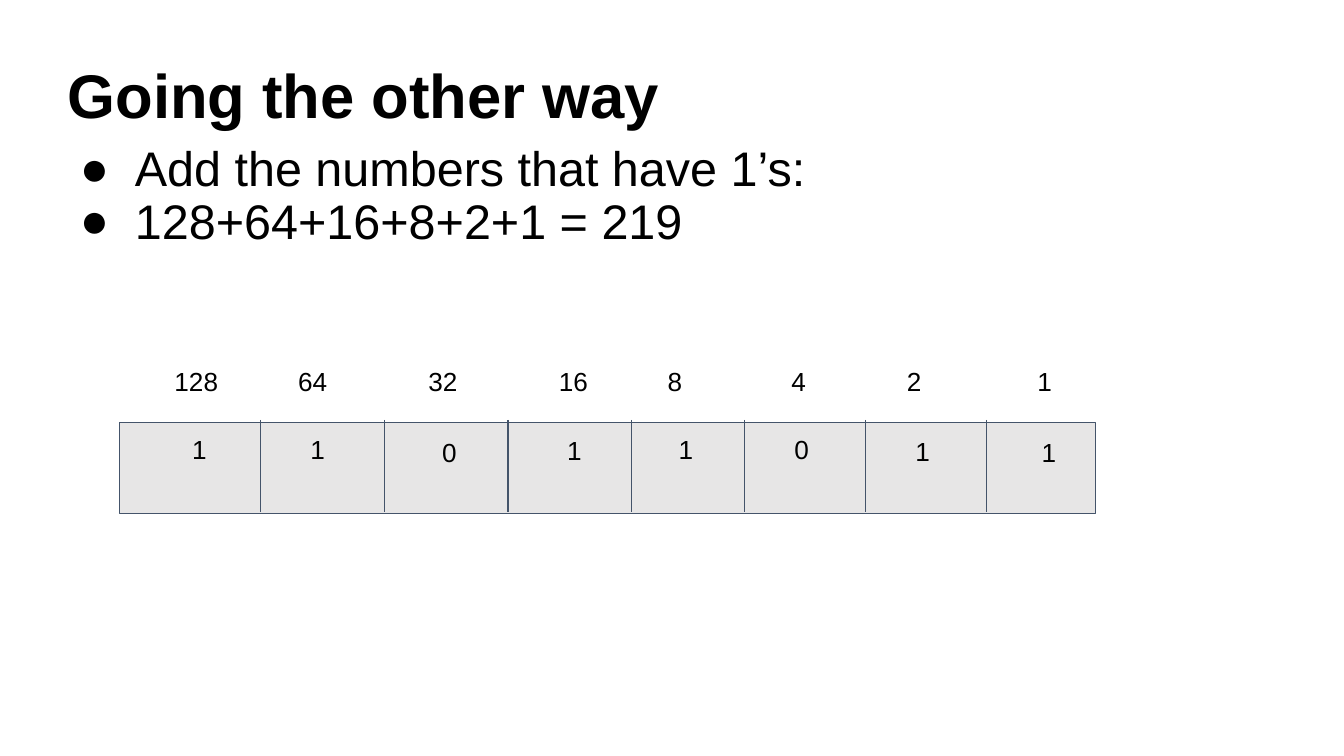
from itertools import accumulate

from lxml.etree import SubElement
from pptx import Presentation
from pptx.dml.color import RGBColor
from pptx.enum.shapes import MSO_CONNECTOR, MSO_SHAPE
from pptx.enum.text import MSO_ANCHOR
from pptx.oxml.ns import qn
from pptx.util import Inches, Pt

BLACK = RGBColor(0x00, 0x00, 0x00)
SLATE = RGBColor(0x44, 0x54, 0x6A)
PALE_GREY = RGBColor(0xE7, 0xE6, 0xE6)

CELL = Inches(0.1)
TITLE_FONT = {"name": "Arial", "size": Pt(33), "bold": True}
BODY_FONT = {"name": "Arial", "size": Pt(26), "bold": False}
DIGIT_FONT = {"name": "Arial", "size": Pt(14), "bold": False}


def grid(cells):
    return round(cells * CELL)


class ByteSlide:
    def __init__(self, slide):
        self.slide = slide

    def text(self, col, row, cols, rows, lines, font, **frame_format):
        box = self.slide.shapes.add_textbox(*map(grid, (col, row, cols, rows)))
        frame = box.text_frame
        values = {"word_wrap": True, "margin_left": grid(1), "margin_right": grid(1),
                  "margin_top": grid(0.5), "margin_bottom": grid(0.5), **frame_format}
        for name, value in values.items():
            setattr(frame, name, value)
        for index, line in enumerate(lines):
            paragraph = frame.paragraphs[0] if index == 0 else frame.add_paragraph()
            run = paragraph.add_run()
            run.text = line
            for name, value in font.items():
                setattr(run.font, name, value)
            run.font.color.rgb = BLACK
        return frame.paragraphs

    def title(self, col, row, cols, rows, wording):
        heading, = self.text(col, row, cols, rows, [wording], TITLE_FONT,
                             vertical_anchor=MSO_ANCHOR.MIDDLE)
        heading.line_spacing = 0.9

    def bullets(self, col, row, cols, rows, lines):
        for paragraph in self.text(col, row, cols, rows, lines, BODY_FONT):
            paragraph.line_spacing = 0.9
            properties = paragraph._p.get_or_add_pPr()
            properties.set("marL", str(grid(5)))
            properties.set("indent", str(-grid(4.1)))
            colour = SubElement(properties, qn("a:buClr"))
            SubElement(colour, qn("a:srgbClr"), val=str(BLACK))
            SubElement(properties, qn("a:buFont"), typeface="Arial")
            SubElement(properties, qn("a:buChar"), char="●")

    def tabbed_row(self, col, row, cols, rows, entries, stops):
        paragraph, = self.text(col, row, cols, rows, ["\t" + "\t".join(entries)],
                               DIGIT_FONT, margin_top=grid(1), margin_bottom=grid(1))
        tabs = SubElement(paragraph._p.get_or_add_pPr(), qn("a:tabLst"))
        for stop in stops:
            SubElement(tabs, qn("a:tab"), pos=str(grid(stop)), algn="l")

    def digit(self, col, row, bit, indent):
        self.text(col, row, 8.5, 6.8, [bit], DIGIT_FONT, margin_left=grid(1 + indent),
                  margin_top=grid(1), margin_bottom=grid(1))

    def outline(self, line):
        line.color.rgb = SLATE
        line.width = Pt(0.75)

    def bar(self, col, row, cols, rows):
        byte = self.slide.shapes.add_shape(
            MSO_SHAPE.RECTANGLE, *map(grid, (col, row, cols, rows)))
        byte.shadow.inherit = False
        byte.fill.solid()
        byte.fill.fore_color.rgb = PALE_GREY
        self.outline(byte.line)

    def divider(self, col, top, bottom):
        border = self.slide.shapes.add_connector(
            MSO_CONNECTOR.STRAIGHT, *map(grid, (col, top, col, bottom)))
        SubElement(border._element.spPr, qn("a:effectLst"))
        self.outline(border.line)


def main():
    deck = Presentation()
    deck.slide_width = Inches(10)
    deck.slide_height = deck.slide_width * 9 // 16
    page = ByteSlide(deck.slides.add_slide(deck.slide_layouts[6]))

    page.title(4.05, 4.2, 92.1, 6.3, "Going the other way")
    page.bullets(4.05, 10.3, 92.1, 41.1,
                 ["Add the numbers that have 1’s:", "128+64+16+8+2+1 = 219"])

    page.bar(8.9, 31.43, 72.6, 6.8)
    for col in accumulate([19.4, 9.2, 9.2, 9.2, 8.4, 9, 9]):
        page.divider(col, 31.24, 38.1)

    place_values = [str(2 ** power) for power in range(7, -1, -1)]
    page.tabbed_row(9.8, 26.2, 73, 5.1, place_values,
                    [2.2, 11.4, 21.1, 30.8, 38.9, 48.1, 56.7, 66.4])

    bit_places = [(10.6, 31.24, 2.7), (19.9, 31.24, 2.2), (29.2, 31.44, 2.7),
                  (38.5, 31.3, 2.7), (46.8, 31.24, 2.7), (55.9, 31.24, 2.2),
                  (64.4, 31.4, 2.7), (73.3, 31.5, 3.2)]
    for bit, (col, row, indent) in zip(f"{219:08b}", bit_places):
        page.digit(col, row, bit, indent)

    deck.save("out.pptx")


if __name__ == "__main__":
    main()
